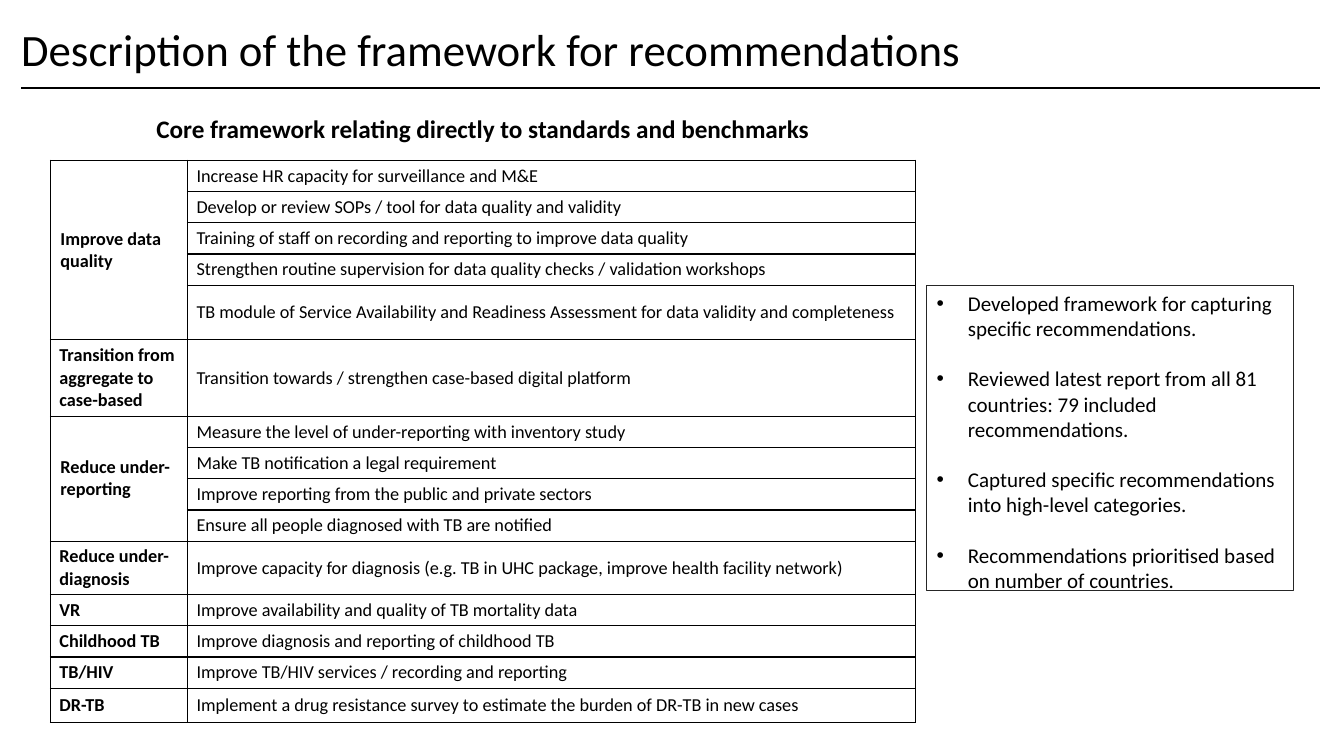
from lxml.etree import SubElement
from pptx import Presentation
from pptx.dml.color import RGBColor
from pptx.enum.shapes import MSO_CONNECTOR
from pptx.enum.text import MSO_ANCHOR, MSO_AUTO_SIZE, PP_ALIGN
from pptx.oxml import parse_xml
from pptx.oxml.ns import nsdecls, qn
from pptx.util import Inches, Pt

COLORS = {"text": "000000", "rule": "000000", "grid": "000000", "frame": "262626"}
FONT = "Calibri"

TITLE = "Description of the framework for recommendations"
SUBTITLE = "Core framework relating directly to standards and benchmarks"
FRAMEWORK = [
    ("Improve data quality", [
        ("Increase HR capacity for surveillance and M&E", 0.31),
        ("Develop or review SOPs / tool for data quality and validity", 0.31),
        ("Training of staff on recording and reporting to improve data quality", 0.31),
        ("Strengthen routine supervision for data quality checks / validation workshops", 0.31),
        ("TB module of Service Availability and Readiness Assessment for data validity and completeness", 0.54),
    ]),
    ("Transition from aggregate to case-based", [
        ("Transition towards / strengthen case-based digital platform", 0.76),
    ]),
    ("Reduce under-reporting", [
        ("Measure the level of under-reporting with inventory study", 0.31),
        ("Make TB notification a legal requirement", 0.31),
        ("Improve reporting from the public and private sectors", 0.31),
        ("Ensure all people diagnosed with TB are notified", 0.31),
    ]),
    ("Reduce under-diagnosis", [
        ("Improve capacity for diagnosis (e.g. TB in UHC package, improve health facility network)", 0.53),
    ]),
    ("VR", [("Improve availability and quality of TB mortality data", 0.31)]),
    ("Childhood TB", [("Improve diagnosis and reporting of childhood TB", 0.31)]),
    ("TB/HIV", [("Improve TB/HIV services / recording and reporting", 0.31)]),
    ("DR-TB", [
        ("Implement a drug resistance survey to estimate the burden of DR-TB in new cases", 0.34),
    ]),
]
METHOD = [
    "Developed framework for capturing specific recommendations.",
    "Reviewed latest report from all 81 countries: 79 included recommendations.",
    "Captured specific recommendations into high-level categories.",
    "Recommendations prioritised based on number of countries.",
]


def rgb(name):
    """Return the named colour."""
    return RGBColor.from_string(COLORS[name])


def write(paragraph, text, size, bold=False, align=PP_ALIGN.LEFT, before=0, spacing=1.0):
    """Fill one paragraph with formatted text."""
    paragraph.text = text
    paragraph.alignment = align
    paragraph.space_before = Pt(before)
    paragraph.line_spacing = spacing
    font = paragraph.runs[0].font
    font.name, font.size, font.bold = FONT, Pt(size), bold
    font.color.rgb = rgb("text")


def place(part, left, top, width, height):
    """Move a part to its box."""
    part.left, part.top = Inches(left), Inches(top)
    part.width, part.height = Inches(width), Inches(height)


def set_margins(holder, across, down):
    """Set the side and vertical margins of a cell or text frame."""
    holder.margin_left = holder.margin_right = Inches(across)
    holder.margin_top = holder.margin_bottom = Inches(down)


def add_heading(slide, left, top, width, height):
    """Place the title with the rule beneath it."""
    title = slide.shapes.title
    place(title, left, top, width, height)
    frame = title.text_frame
    frame.vertical_anchor = MSO_ANCHOR.MIDDLE
    frame.auto_size = MSO_AUTO_SIZE.NONE
    set_margins(frame, 0, 0)
    write(frame.paragraphs[0], TITLE, 32, spacing=0.9)
    rule_y = Inches(top + height - 0.07)
    rule = slide.shapes.add_connector(
        MSO_CONNECTOR.STRAIGHT, Inches(left), rule_y, Inches(left + width - 0.11), rule_y)
    rule.line.color.rgb = rgb("rule")
    rule.line.width = Pt(1.5)
    SubElement(rule._element.spPr, qn("a:effectLst"))


def add_subtitle(slide, left, top, width, height):
    """Place the centred heading of the table."""
    subtitle = slide.shapes.add_textbox(
        Inches(left), Inches(top), Inches(width), Inches(height))
    subtitle.text_frame.word_wrap = True
    write(subtitle.text_frame.paragraphs[0], SUBTITLE, 18, bold=True, align=PP_ALIGN.CENTER)


def add_borders(cell):
    """Draw the four borders of a cell."""
    properties = cell._tc.get_or_add_tcPr()
    for index, side in enumerate(("lnL", "lnR", "lnT", "lnB")):
        properties.insert(index, parse_xml(
            f'<a:{side} {nsdecls("a")} w="{Pt(1)}"><a:solidFill>'
            f'<a:srgbClr val="{COLORS["grid"]}"/></a:solidFill></a:{side}>'))


def add_framework(slide, left, top, category_width, action_width):
    """Place the table of categories and their actions."""
    heights = [height for _, actions in FRAMEWORK for _, height in actions]
    table = slide.shapes.add_table(
        len(heights), 2, Inches(left), Inches(top),
        Inches(category_width + action_width), Inches(sum(heights))).table
    table.first_row = table.horz_banding = False
    table.columns[0].width = Inches(category_width)
    table.columns[1].width = Inches(action_width)
    for row, height in zip(table.rows, heights):
        row.height = Inches(height)
    for cell in table.iter_cells():
        cell.fill.background()
        cell.vertical_anchor = MSO_ANCHOR.MIDDLE
        set_margins(cell, 0.09, 0.04)
        add_borders(cell)
    start = 0
    for category, actions in FRAMEWORK:
        category_cell = table.cell(start, 0)
        if len(actions) > 1:
            category_cell.merge(table.cell(start + len(actions) - 1, 0))
            set_margins(category_cell, 0.1, 0.05)
        write(category_cell.text_frame.paragraphs[0], category, 13, bold=True)
        for offset, (action, _) in enumerate(actions):
            write(table.cell(start + offset, 1).text_frame.paragraphs[0], action, 13)
        start += len(actions)


def add_method(slide, left, top, width, height):
    """Place the framed list of working steps."""
    method = slide.placeholders[1]
    place(method, left, top, width, height)
    method.fill.background()
    method.line.color.rgb = rgb("frame")
    method.line.width = Pt(0.75)
    frame = method.text_frame
    frame.word_wrap = True
    frame.auto_size = MSO_AUTO_SIZE.SHAPE_TO_FIT_TEXT
    frame.vertical_anchor = MSO_ANCHOR.TOP
    set_margins(frame, 0.1, 0.05)
    for index, step in enumerate(METHOD):
        paragraph = frame.add_paragraph() if index else frame.paragraphs[0]
        properties = paragraph._p.get_or_add_pPr()
        properties.set("marL", str(Inches(0.31)))
        properties.set("indent", str(-Inches(0.31)))
        SubElement(properties, qn("a:buFont")).set("typeface", "Arial")
        SubElement(properties, qn("a:buChar")).set("char", "•")
        write(paragraph, step, 15, before=18 if index else 0)


def main():
    """Build and save the slide."""
    presentation = Presentation()
    presentation.slide_width, presentation.slide_height = Inches(13.33), Inches(7.5)
    slide = presentation.slides.add_slide(presentation.slide_layouts[1])
    add_heading(slide, 0.21, 0.09, 12.99, 0.85)
    add_framework(slide, 0.5, 1.59, 1.36, 7.22)
    add_method(slide, 9.19, 2.83, 3.64, 3.13)
    add_subtitle(slide, 0.4, 1.08, 8.78, 0.4)
    presentation.save("out.pptx")


if __name__ == "__main__":
    main()
